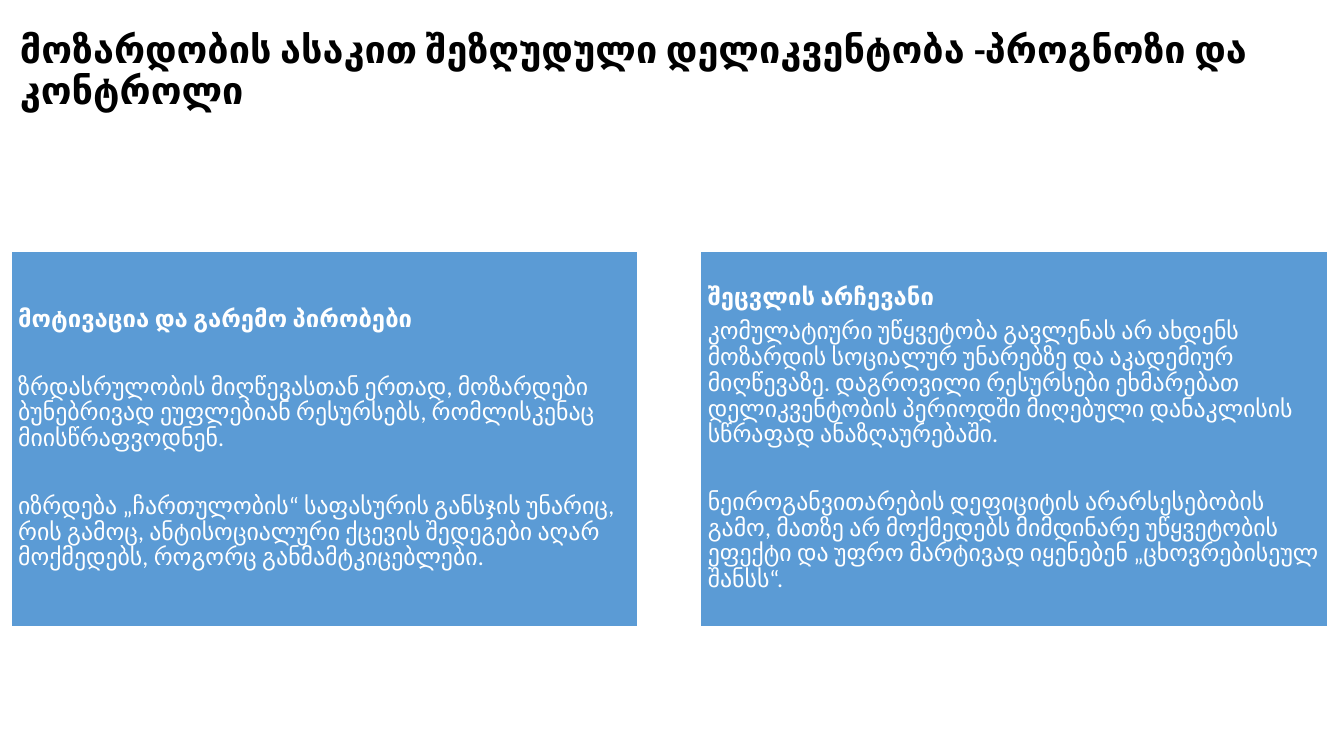
import pptx
import pptx.dml.color
import pptx.enum.shapes
import pptx.enum.text
import pptx.util
from pptx.util import Inches

BLACK = pptx.dml.color.RGBColor(0x00, 0x00, 0x00)
WHITE = pptx.dml.color.RGBColor(0xFF, 0xFF, 0xFF)
BLUE = pptx.dml.color.RGBColor(0x5B, 0x9B, 0xD5)

TITLE = "მოზარდობის ასაკით შეზღუდული დელიკვენტობა -პროგნოზი და კონტროლი"
CARDS = [
    [
        ("მოტივაცია და გარემო პირობები", True, 30),
        ("ზრდასრულობის მიღწევასთან ერთად, მოზარდები ბუნებრივად ეუფლებიან "
         "რესურსებს, რომლისკენაც მიისწრაფვოდნენ.", False, 30),
        ("იზრდება „ჩართულობის“ საფასურის განსჯის უნარიც, რის გამოც, "
         "ანტისოციალური ქცევის შედეგები აღარ მოქმედებს, როგორც "
         "განმამტკიცებლები.", False, 6),
    ],
    [
        ("შეცვლის არჩევანი", True, 6),
        ("კომულატიური უწყვეტობა გავლენას არ ახდენს მოზარდის სოციალურ უნარებზე "
         "და აკადემიურ მიღწევაზე. დაგროვილი რესურსები ეხმარებათ "
         "დელიკვენტობის პერიოდში მიღებული დანაკლისის სწრაფად "
         "ანაზღაურებაში.", False, 30),
        ("ნეიროგანვითარების დეფიციტის არარსესებობის გამო, მათზე არ მოქმედებს "
         "მიმდინარე უწყვეტობის ეფექტი და უფრო მარტივად იყენებენ "
         "„ცხოვრებისეულ შანსს“.", False, 6),
    ],
]


class SlideBuilder:
    font_name = "Calibri"
    line_spacing = 0.9

    def __init__(self, slide):
        self.slide = slide

    def add_text(self, text_frame, paragraphs, size, color):
        text_frame.word_wrap = True
        text_frame.vertical_anchor = pptx.enum.text.MSO_ANCHOR.MIDDLE
        for index, (text, bold, space_after) in enumerate(paragraphs):
            paragraph = text_frame.add_paragraph() if index else text_frame.paragraphs[0]
            paragraph.alignment = pptx.enum.text.PP_ALIGN.LEFT
            paragraph.line_spacing = self.line_spacing
            paragraph.space_after = pptx.util.Pt(space_after)
            run = paragraph.add_run()
            run.text = text
            run.font.name = self.font_name
            run.font.size = pptx.util.Pt(size)
            run.font.bold = bold
            run.font.color.rgb = color

    def add_title(self, text, left, top, width, height):
        box = self.slide.shapes.add_textbox(
            Inches(left), Inches(top), Inches(width), Inches(height))
        self.add_text(box.text_frame, [(text, True, 0)], 27, BLACK)

    def add_card(self, paragraphs, left, top, width, height):
        card = self.slide.shapes.add_shape(
            pptx.enum.shapes.MSO_SHAPE.RECTANGLE,
            Inches(left), Inches(top), Inches(width), Inches(height))
        card.shadow.inherit = False
        card.fill.solid()
        card.fill.fore_color.rgb = BLUE
        card.line.color.rgb = WHITE
        card.line.width = pptx.util.Pt(1)
        text_frame = card.text_frame
        text_frame.margin_left = text_frame.margin_right = Inches(0.07)
        text_frame.margin_top = text_frame.margin_bottom = Inches(0.07)
        self.add_text(text_frame, paragraphs, 17, WHITE)


def main():
    presentation = pptx.Presentation()
    presentation.slide_width = Inches(13.33)
    presentation.slide_height = Inches(7.5)
    slide = presentation.slides.add_slide(presentation.slide_layouts[6])
    builder = SlideBuilder(slide)
    builder.add_title(TITLE, 0.1, 0.4, 13.06, 0.63)
    card_width, card_gap = 6.22, 0.62
    for column, paragraphs in enumerate(CARDS):
        left = 0.11 + column * (card_width + card_gap)
        builder.add_card(paragraphs, left, 2.49, card_width, 3.73)
    presentation.save("out.pptx")


if __name__ == "__main__":
    main()
